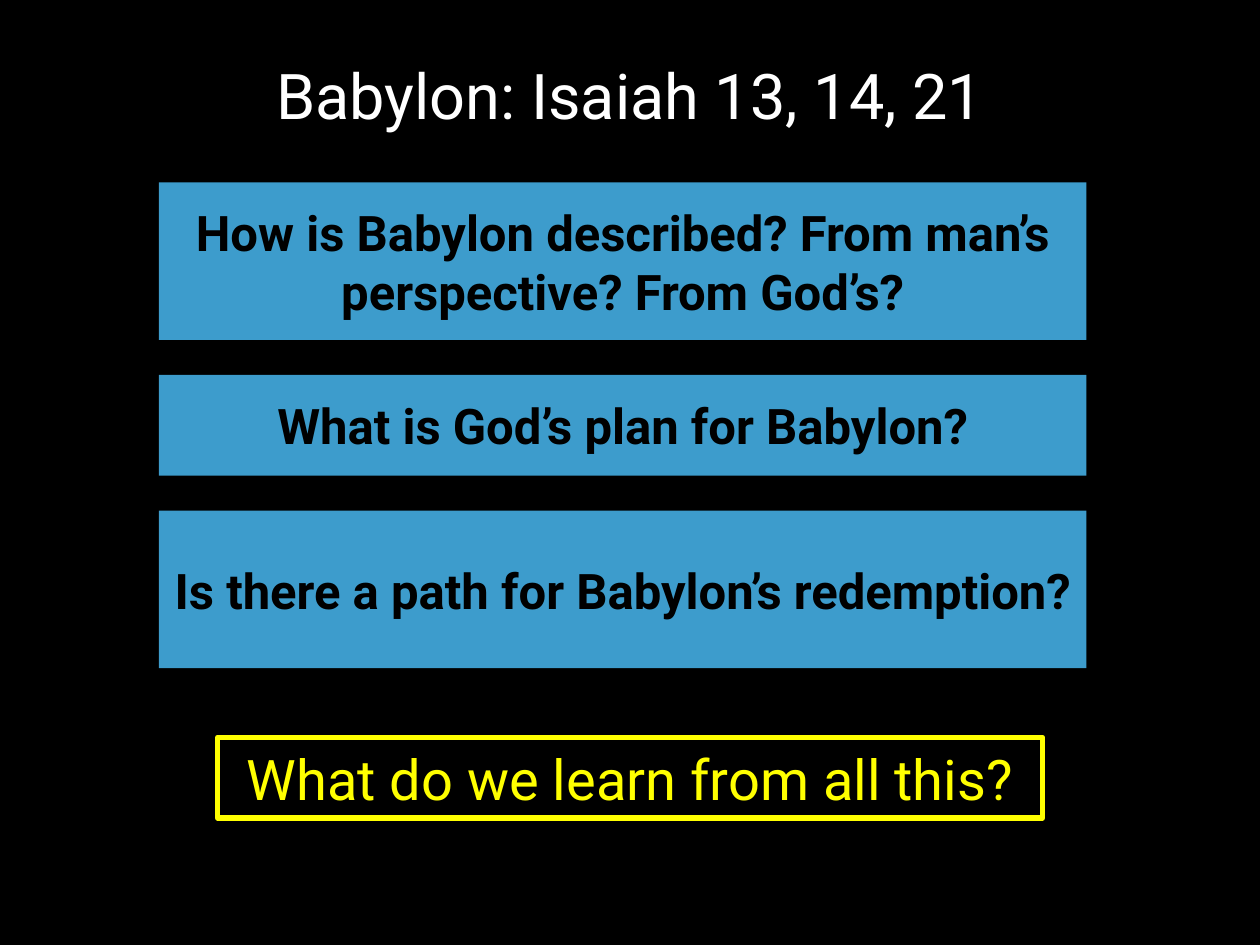
import pptx
import pptx.dml.color
import pptx.enum.shapes
import pptx.enum.text
import pptx.util

Pt = pptx.util.Pt
RGBColor = pptx.dml.color.RGBColor
ANCHOR = pptx.enum.text.MSO_ANCHOR

BLACK = RGBColor(0x00, 0x00, 0x00)
WHITE = RGBColor(0xFF, 0xFF, 0xFF)
BLUE = RGBColor(0x3D, 0x9C, 0xCC)
YELLOW = RGBColor(0xFF, 0xFF, 0x00)

QUESTION_LEFT, QUESTION_TOP, QUESTION_WIDTH = 90.8, 104.2, 530
QUESTION_GAP = 20
QUESTIONS = [
    ("How is Babylon described? From man’s perspective? From God’s?", 90),
    ("What is God’s plan for Babylon?", 57.6),
    ("Is there a path for Babylon’s redemption?", 90),
]


def write_text(shape, text, size, color, bold=False, anchor=ANCHOR.MIDDLE, line_spacing=None):
    frame = shape.text_frame
    frame.word_wrap = True
    frame.vertical_anchor = anchor
    paragraph = frame.paragraphs[0]
    paragraph.alignment = pptx.enum.text.PP_ALIGN.CENTER
    paragraph.line_spacing = line_spacing
    run = paragraph.add_run()
    run.text = text
    run.font.name = "Roboto"
    run.font.size = Pt(size)
    run.font.bold = bold
    run.font.color.rgb = color


def add_box(slide, left, top, width, height, fill=None, line=None):
    shape = slide.shapes.add_shape(
        pptx.enum.shapes.MSO_SHAPE.RECTANGLE, Pt(left), Pt(top), Pt(width), Pt(height))
    shape.shadow.inherit = False
    if fill is None:
        shape.fill.background()
    else:
        shape.fill.solid()
        shape.fill.fore_color.rgb = fill
    if line is None:
        shape.line.fill.background()
    else:
        shape.line.color.rgb = line
        shape.line.width = Pt(3)
    return shape


def add_title(slide, text):
    title = slide.shapes.add_textbox(Pt(49.7), Pt(33.8), Pt(620.6), Pt(50.4))
    write_text(title, text, size=36, color=WHITE, anchor=ANCHOR.TOP, line_spacing=0.9)


def add_questions(slide):
    top = QUESTION_TOP
    for text, height in QUESTIONS:
        box = add_box(slide, QUESTION_LEFT, top, QUESTION_WIDTH, height, fill=BLUE)
        write_text(box, text, size=28, color=BLACK, bold=True)
        top += height + QUESTION_GAP


def main():
    presentation = pptx.Presentation()
    presentation.slide_width, presentation.slide_height = Pt(720), Pt(540)
    slide = presentation.slides.add_slide(presentation.slide_layouts[6])
    slide.background.fill.solid()
    slide.background.fill.fore_color.rgb = BLACK

    # Title and the stack of questions
    add_title(slide, "Babylon: Isaiah 13, 14, 21")
    add_questions(slide)

    # Closing question in an outlined box
    closing = add_box(slide, 124.4, 421.4, 471.4, 46, line=YELLOW)
    write_text(closing, "What do we learn from all this?", size=32, color=YELLOW)
    closing.text_frame.auto_size = pptx.enum.text.MSO_AUTO_SIZE.SHAPE_TO_FIT_TEXT

    presentation.save("out.pptx")


if __name__ == "__main__":
    main()
